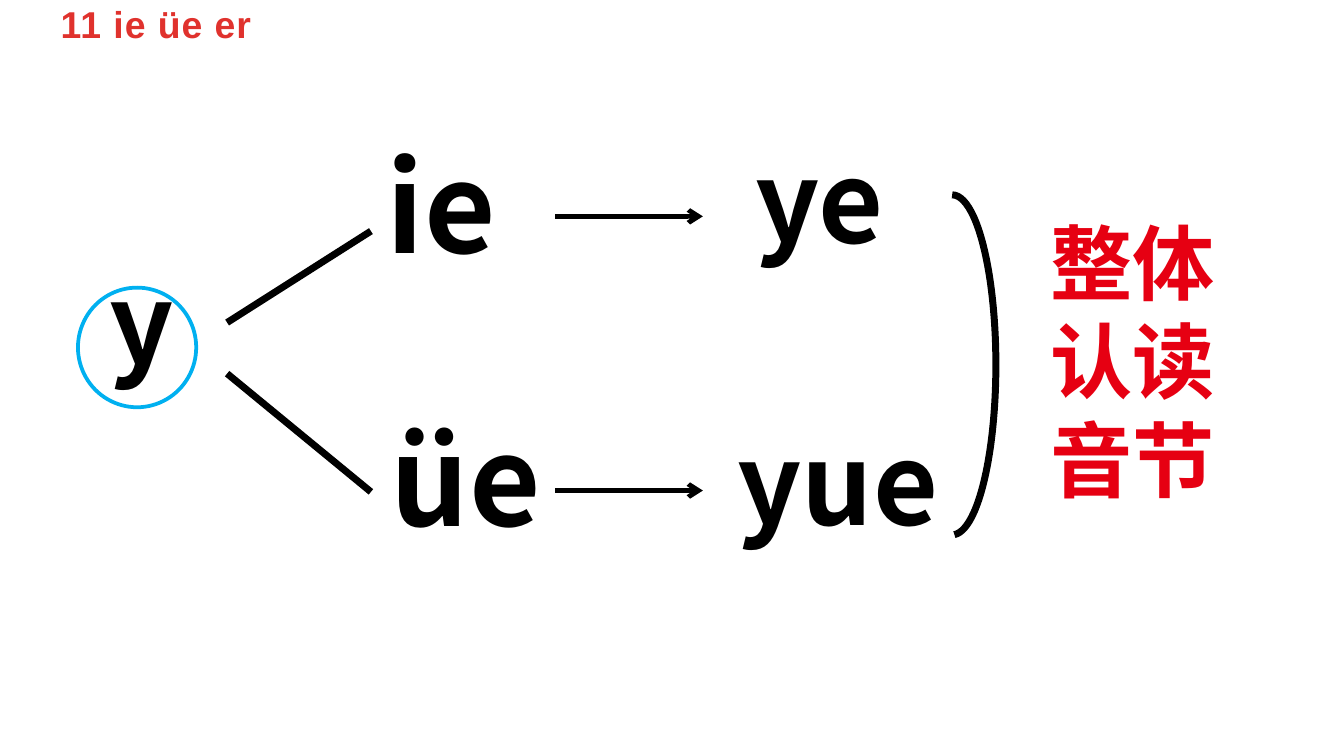
from dataclasses import dataclass

from lxml import etree
from pptx import Presentation
from pptx.dml.color import RGBColor
from pptx.enum import shapes, text
from pptx.oxml import ns
from pptx.util import Inches, Pt

COLORS = {"title": "E0322D", "ink": "000000", "ring": "00B0F0",
          "note": "E60012", "paper": "FFFFFF"}
CJK = "Noto Sans CJK JP"


@dataclass
class Label:
    words: str
    left: float
    top: float
    width: float
    height: float
    size: int = 60
    color: str = "ink"


@dataclass
class Stroke:
    start: tuple[float, float]
    end: tuple[float, float]
    weight: float = 3.75
    arrow: bool = False


LABELS = [
    Label("y", 0.72, 1.84, 0.96, 1.11),
    Label("ie", 2.78, 0.92, 1.5, 1.21, size=66),
    Label("üe", 2.81, 2.95, 1.5, 1.21, size=66),
    Label("ye", 5.52, 0.93, 1.87, 1.11),
    Label("yue", 5.39, 3.03, 1.87, 1.11),
    Label("整体认读音节", 7.72, 1.53, 1.58, 2.32, size=44, color="note"),
]
STROKES = [
    Stroke((1.69, 2.4), (2.76, 1.72)),
    Stroke((1.69, 2.78), (2.76, 3.66)),
    *(Stroke((4.13, y), (5.23, y), weight=2.5, arrow=True) for y in (1.61, 3.65)),
]


def rgb(name: str) -> RGBColor:
    return RGBColor.from_string(COLORS[name])


def write(box, words: str, *, size: int, color: str, font: str = CJK,
          align=text.PP_ALIGN.LEFT, tracking: int = 0) -> None:
    """Put bold text into a box."""
    frame = box.text_frame
    frame.word_wrap = True
    frame.vertical_anchor = text.MSO_ANCHOR.TOP
    frame.auto_size = text.MSO_AUTO_SIZE.SHAPE_TO_FIT_TEXT
    frame.margin_left = frame.margin_right = Inches(0.1)
    frame.margin_top = frame.margin_bottom = Inches(0.05)
    para = frame.paragraphs[0]
    para.alignment = align
    para.space_before = Pt(0)
    span = para.add_run()
    span.text = words
    span.font.name = font
    span.font.size = Pt(size)
    span.font.bold = True
    span.font.color.rgb = rgb(color)
    props = span.font._element
    if tracking:
        props.set("spc", str(tracking))
    etree.SubElement(props, ns.qn("a:ea")).set("typeface", font)


def place(box, left: float, top: float, width: float, height: float) -> None:
    box.left, box.top = Inches(left), Inches(top)
    box.width, box.height = Inches(width), Inches(height)


def draw_label(page, label: Label) -> None:
    area = [Inches(v) for v in (label.left, label.top, label.width, label.height)]
    write(page.shapes.add_textbox(*area), label.words, size=label.size, color=label.color)


def draw_stroke(page, stroke: Stroke) -> None:
    ends = [Inches(v) for v in (*stroke.start, *stroke.end)]
    line = page.shapes.add_connector(shapes.MSO_CONNECTOR.STRAIGHT, *ends)
    line.line.color.rgb = rgb("ink")
    line.line.width = Pt(stroke.weight)
    if stroke.arrow:
        etree.SubElement(line.line._get_or_add_ln(), ns.qn("a:tailEnd")).set("type", "arrow")
    etree.SubElement(line._element.spPr, ns.qn("a:effectLst"))


def draw_outline(page, kind, area: tuple, color: str, weight: float, fill: str | None = None):
    shape = page.shapes.add_shape(kind, *(Inches(v) for v in area))
    shape.shadow.inherit = False
    if fill:
        shape.fill.solid()
        shape.fill.fore_color.rgb = rgb(fill)
    else:
        shape.fill.background()
    shape.line.color.rgb = rgb(color)
    shape.line.width = Pt(weight)
    return shape


def main() -> None:
    # Widescreen page, 16:9
    deck = Presentation()
    deck.slide_width = Inches(10)
    deck.slide_height = Inches(10 * 9 / 16)
    page = deck.slides.add_slide(deck.slide_layouts[5])

    # Lesson title
    title = page.shapes.title
    place(title, -0.81, -0.04, 3.94, 0.44)
    write(title, "11 ie üe er", size=20, color="title", font="Arial",
          align=text.PP_ALIGN.CENTER, tracking=50)

    # Ring around the initial, and bracket joining the syllables
    kinds = shapes.MSO_SHAPE
    draw_outline(page, kinds.FLOWCHART_CONNECTOR, (0.58, 2.14, 0.88, 0.89),
                 "ring", 2, fill="paper")
    bracket = draw_outline(page, kinds.ARC, (6.76, 1.45, 0.65, 2.53), "ink", 3.75)
    bracket.adjustments[0], bracket.adjustments[1] = 162, 53.55

    # Branches and arrows, then the letters
    for stroke in STROKES:
        draw_stroke(page, stroke)
    for label in LABELS:
        draw_label(page, label)

    deck.save("out.pptx")


if __name__ == "__main__":
    main()
